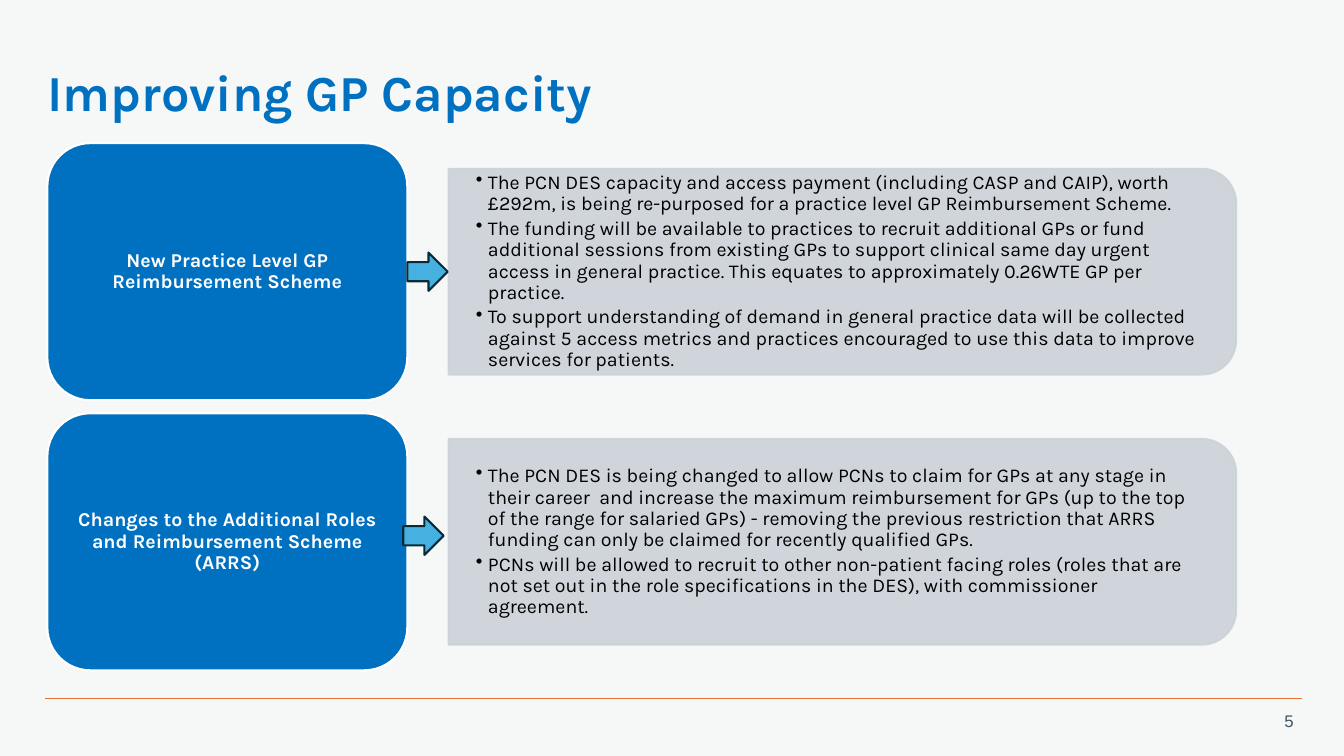
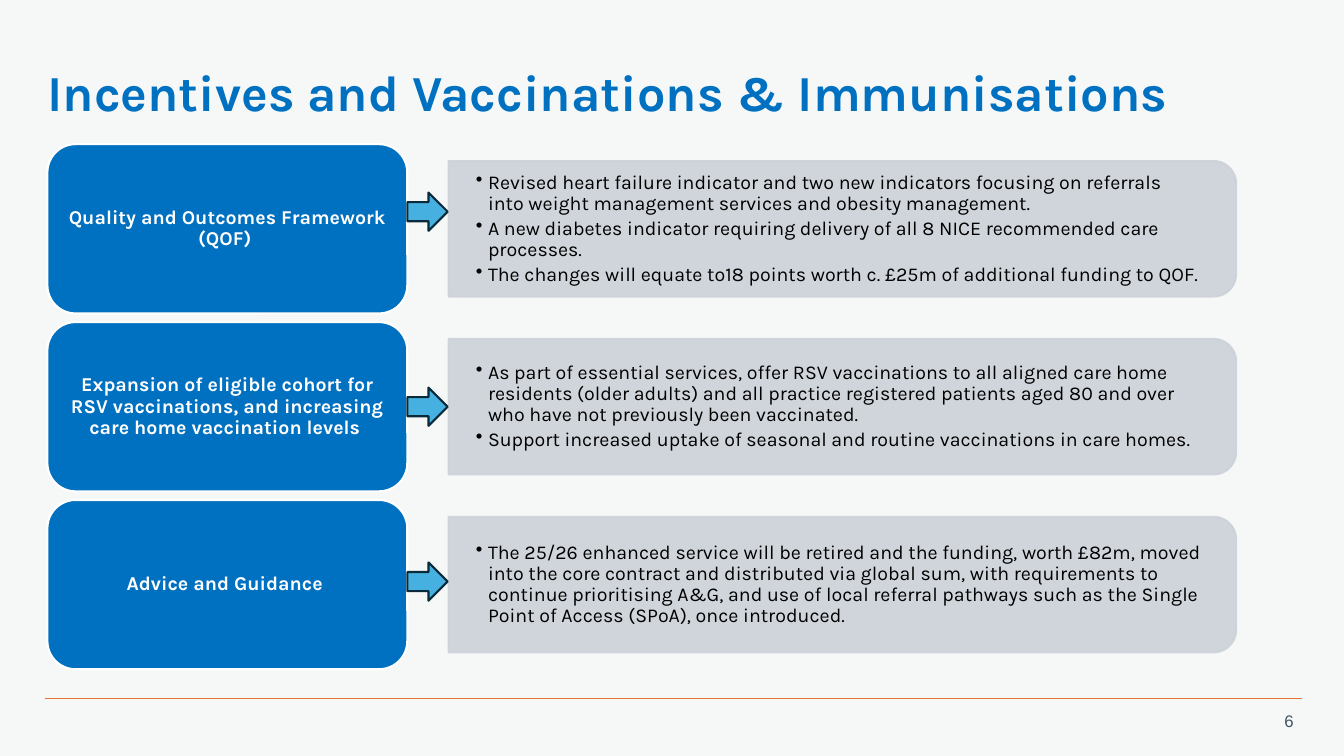
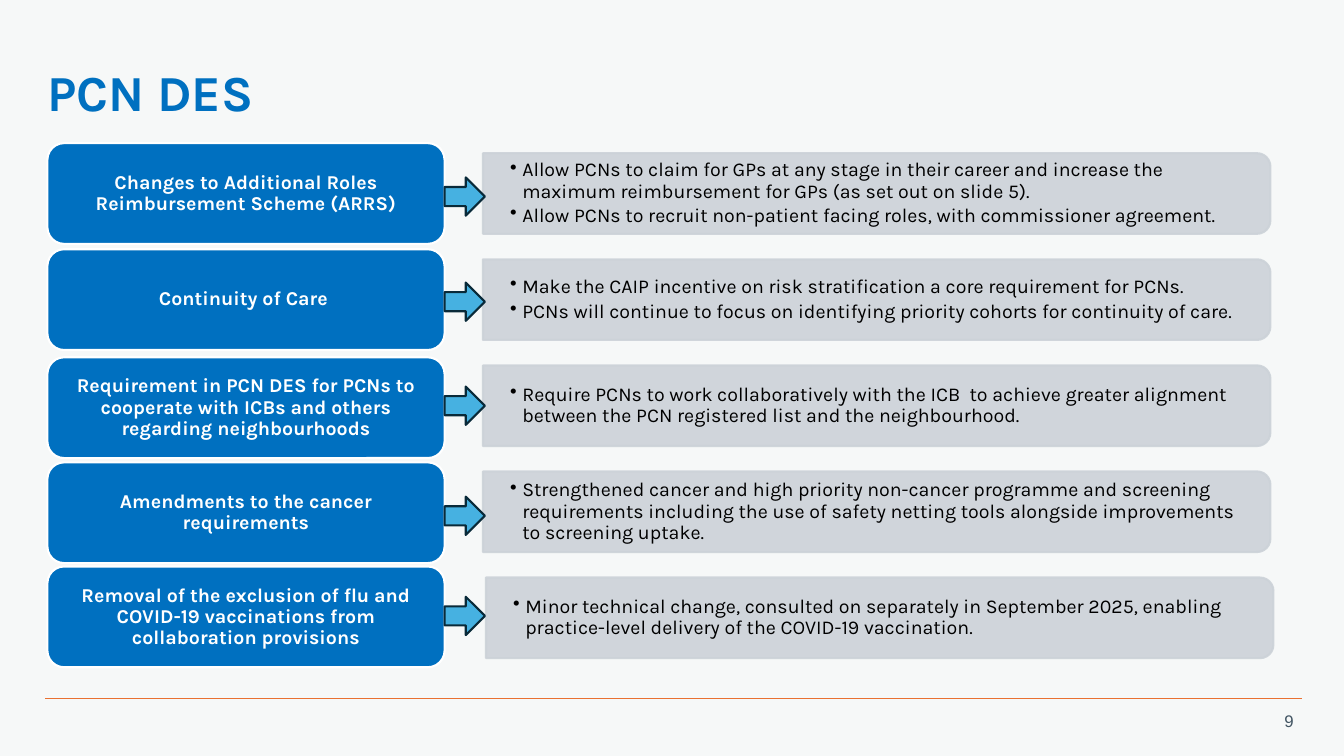
from dataclasses import dataclass
from lxml import etree
from pptx import Presentation, util as u
from pptx.dml.color import RGBColor
from pptx.enum import shapes, text
from pptx.oxml.ns import qn

INK = {"page": "F6F8F8", "rule": "E97132", "num": "425563", "blue": "0070C0",
       "pane": "CCD2D8", "body": "000000", "white": "FFFFFF",
       "arrow": "46B1E1", "edge": "092A39"}
FACE = "Karla"
LEFT = 0.47
PANE = 7.81
KIND = shapes.MSO_SHAPE


@dataclass
class Row:
    head: str
    points: list
    card_y: float = 0
    arrow_x: float = 0
    arrow_y: float = 0
    pane_x: float = 0


def hue(name):
    return RGBColor.from_string(INK[name])


def inch(*nums):
    return [u.Inches(round(n, 3)) for n in nums]


def add_run(para, words, size, ink, bold=False, face=FACE):
    run = para.add_run()
    run.text = words
    font = run.font
    font.name, font.size, font.bold = face, u.Pt(size), bold
    font.color.rgb = hue(ink)


def set_frame(shape, side, top):
    frame = shape.text_frame
    frame.word_wrap = True
    frame.vertical_anchor = text.MSO_ANCHOR.MIDDLE
    frame.margin_left = frame.margin_right = u.Inches(side)
    frame.margin_top = frame.margin_bottom = u.Inches(top)
    return frame


def add_form(slide, kind, box, fill, line):
    form = slide.shapes.add_shape(kind, *inch(*box))
    form.shadow.inherit = False
    form.fill.solid()
    form.fill.fore_color.rgb = hue(fill)
    form.line.color.rgb = hue(line)
    form.line.width = u.Pt(1.5)
    return form


def add_title(slide, words):
    box = slide.shapes.add_textbox(*inch(LEFT, 0.47, 12.47, 0.95))
    para = set_frame(box, 0, 0).paragraphs[0]
    para.line_spacing = 0.9
    add_run(para, words, 36, "blue", True)


def add_foot(slide, num):
    rule = slide.shapes.add_connector(
        shapes.MSO_CONNECTOR.STRAIGHT, *inch(0.45, 6.93, 12.91, 6.93))
    rule.line.color.rgb = hue("rule")
    rule.line.width = u.Pt(0.5)
    etree.SubElement(rule._element.spPr, qn("a:effectLst"))
    box = slide.shapes.add_textbox(*inch(12.52, 7, 0.41, 0.3))
    para = set_frame(box, 0.1, 0.05).paragraphs[0]
    para.alignment = text.PP_ALIGN.RIGHT
    add_run(para, num, 12, "num", face="Arial")


def add_pane(slide, left, mid, high, points):
    pane = add_form(slide, KIND.ROUND_2_SAME_RECTANGLE,
                    (left + (PANE - high) / 2, mid - PANE / 2, high, PANE),
                    "pane", "pane")
    pane.rotation = 90
    for clr in pane._element.spPr.iter(qn("a:srgbClr")):
        etree.SubElement(clr, qn("a:alpha")).set("val", "90000")
    inset = high * 0.05
    box = slide.shapes.add_textbox(
        *inch(left, mid - high / 2 + inset, PANE - inset, high - 2 * inset))
    frame = set_frame(box, 0.27, 0.14)
    for i, point in enumerate(points):
        para = frame.add_paragraph() if i else frame.paragraphs[0]
        props = para._p.get_or_add_pPr()
        props.set("marL", str(u.Inches(0.12)))
        props.set("indent", str(u.Inches(-0.12)))
        etree.SubElement(props, qn("a:buChar")).set("char", "•")
        para.line_spacing = 0.9
        para.space_after = u.Pt(2.5)
        add_run(para, point, 14, "body")


def add_card(slide, box, head):
    card = add_form(slide, KIND.ROUNDED_RECTANGLE, box, "blue", "white")
    para = set_frame(card, 0.06, 0.03).paragraphs[0]
    para.alignment = text.PP_ALIGN.CENTER
    para.line_spacing = 0.9
    add_run(para, head, 14, "white", True)


def add_rows(slide, box, card, gap, rows):
    left, top, high = box
    wide, tall = card
    pitch = (high - tall) / (len(rows) - 1)
    edge = left + wide
    for i, row in enumerate(rows):
        y = top + i * pitch
        mid = y + tall / 2
        add_pane(slide, edge + gap + row.pane_x, mid, tall * 0.8, row.points)
        add_card(slide, (left, y + row.card_y, wide, tall), row.head)
        add_form(slide, KIND.RIGHT_ARROW,
                 (edge + row.arrow_x, mid - 0.19 + row.arrow_y, 0.4, 0.38),
                 "arrow", "edge")


def add_page(deck, title, num, box, card, gap, rows):
    slide = deck.slides.add_slide(deck.slide_layouts[6])
    add_foot(slide, num)
    add_title(slide, title)
    add_rows(slide, box, card, gap, rows)


GP_ROWS = [
    Row("New Practice Level GP Reimbursement Scheme", [
        "The PCN DES capacity and access payment (including CASP and CAIP), worth £292m, is being re-purposed for a practice level GP Reimbursement Scheme.",
        "The funding will be available to practices to recruit additional GPs or fund additional sessions from existing GPs to support clinical same day urgent access in general practice. This equates to approximately 0.26WTE GP per practice.",
        "To support understanding of demand in general practice data will be collected against 5 access metrics and practices encouraged to use this data to improve services for patients."]),
    Row("Changes to the Additional Roles and Reimbursement Scheme (ARRS)", [
        "The PCN DES is being changed to allow PCNs to claim for GPs at any stage in their career  and increase the maximum reimbursement for GPs (up to the top of the range for salaried GPs) - removing the previous restriction that ARRS funding can only be claimed for recently qualified GPs.",
        "PCNs will be allowed to recruit to other non-patient facing roles (roles that are not set out in the role specifications in the DES), with commissioner agreement."],
        arrow_x=-0.04, arrow_y=-0.06),
]

CARE_ROWS = [
    Row("Quality and Outcomes Framework (QOF) ", [
        "Revised heart failure indicator and two new indicators focusing on referrals into weight management services and obesity management.",
        "A new diabetes indicator requiring delivery of all 8 NICE recommended care processes.",
        "The changes will equate to18 points worth c. £25m of additional funding to QOF."],
        arrow_y=-0.17),
    Row("Expansion of eligible cohort for RSV vaccinations, and increasing care home vaccination levels ", [
        "As part of essential services, offer RSV vaccinations to all aligned care home residents (older adults) and all practice registered patients aged 80 and over who have not previously been vaccinated.",
        "Support increased uptake of seasonal and routine vaccinations in care homes."]),
    Row("Advice and Guidance ", [
        "The 25/26 enhanced service will be retired and the funding, worth £82m, moved into the core contract and distributed via global sum, with requirements to continue prioritising A&G, and use of local referral pathways such as the Single Point of Access (SPoA), once introduced."],
        arrow_y=-0.03),
]

DES_ROWS = [
    Row("Changes to Additional Roles Reimbursement Scheme (ARRS)", [
        "Allow PCNs to claim for GPs at any stage in their career and increase the maximum reimbursement for GPs (as set out on slide 5).",
        "Allow PCNs to recruit non-patient facing roles, with commissioner agreement."],
        arrow_y=0.03),
    Row("Continuity of Care ", [
        "Make the CAIP incentive on risk stratification a core requirement for PCNs.",
        "PCNs will continue to focus on identifying priority cohorts for continuity of care."],
        arrow_y=0.02),
    Row("Requirement in PCN DES for PCNs to cooperate with ICBs and others regarding neighbourhoods", [
        "Require PCNs to work collaboratively with the ICB  to achieve greater alignment between the PCN registered list and the neighbourhood."],
        card_y=0.02),
    Row("Amendments to the cancer requirements", [
        "Strengthened cancer and high priority non-cancer programme and screening requirements including the use of safety netting tools alongside improvements to screening uptake."],
        card_y=0.01, arrow_y=0.04),
    Row("Removal of the exclusion of flu and COVID-19 vaccinations from collaboration provisions", [
        "Minor technical change, consulted on separately in September 2025, enabling practice-level delivery of the COVID-19 vaccination."],
        card_y=-0.01, arrow_y=-0.02, pane_x=0.03),
]


def main():
    deck = Presentation()
    deck.slide_width, deck.slide_height = inch(13.33, 7.5)
    back = deck.slide_master.background.fill
    back.solid()
    back.fore_color.rgb = hue("page")
    add_page(deck, "Improving GP Capacity", "5",
             (LEFT, 1.42, 5.23), (3.57, 2.55), 0.41, GP_ROWS)
    add_page(deck, "Incentives and Vaccinations & Immunisations", "6",
             (LEFT, 1.43, 5.21), (3.57, 1.68), 0.41, CARE_ROWS)
    add_page(deck, "PCN DES", "9",
             (LEFT, 1.42, 5.21), (3.94, 1), 0.38, DES_ROWS)
    deck.save("out.pptx")


if __name__ == "__main__":
    main()
